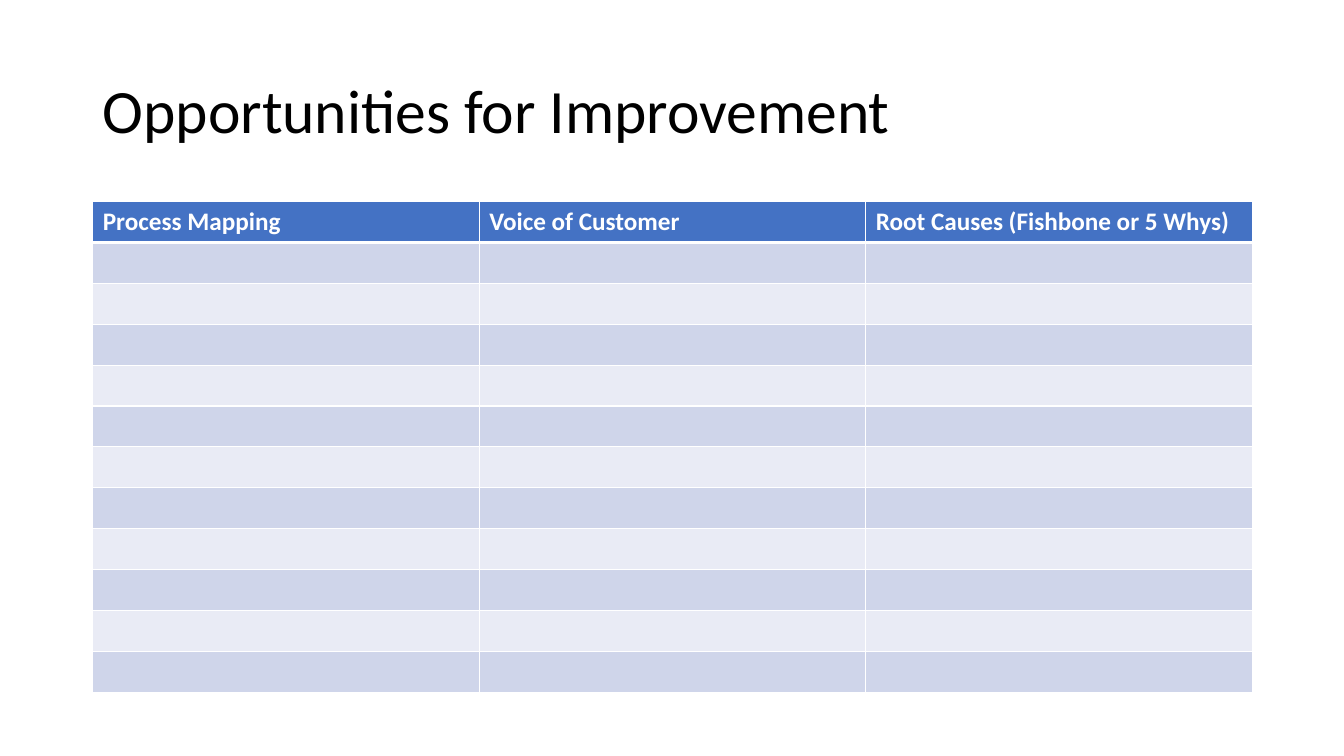
import pptx
import pptx.dml.color
import pptx.enum.text
import pptx.oxml.ns
import pptx.util
import lxml.etree

Inches = pptx.util.Inches
Pt = pptx.util.Pt
RGBColor = pptx.dml.color.RGBColor
qn = pptx.oxml.ns.qn

BLACK = RGBColor(0x00, 0x00, 0x00)
WHITE = RGBColor(0xFF, 0xFF, 0xFF)
HEADER_BLUE = RGBColor(0x44, 0x72, 0xC4)
BAND_DARK = RGBColor(0xCF, 0xD5, 0xEA)
BAND_LIGHT = RGBColor(0xE9, 0xEB, 0xF5)

HEADINGS = ["Process Mapping", "Voice of Customer", "Root Causes (Fishbone or 5 Whys)"]
BLANK_ROWS = 11


def write_text(tf, text, size=18, color=BLACK, bold=False, spacing=None):
    p = tf.paragraphs[0]
    p.line_spacing = spacing
    r = p.add_run()
    r.text = text
    r.font.name = "Calibri"
    r.font.size = Pt(size)
    r.font.bold = bold
    r.font.color.rgb = color


def set_borders(cell, color, **widths):
    tc_pr = cell._tc.get_or_add_tcPr()
    for side in "LRTB":
        ln = lxml.etree.SubElement(tc_pr, qn(f"a:ln{side}"), w=str(Pt(widths.get(side, 1))))
        fill = lxml.etree.SubElement(ln, qn("a:solidFill"))
        lxml.etree.SubElement(fill, qn("a:srgbClr"), val=str(color))


def add_title(s, left, top, width, height):
    tf = s.shapes.add_textbox(left, top, width, height).text_frame
    tf.word_wrap = True
    tf.vertical_anchor = pptx.enum.text.MSO_ANCHOR.MIDDLE
    write_text(tf, "Opportunities for Improvement", size=44, spacing=0.9)


def add_opportunity_table(s, left, top, width, height):
    frame = s.shapes.add_table(BLANK_ROWS + 1, len(HEADINGS), left, top, width, height)
    table = frame.table
    for i, row in enumerate(table.rows):
        for cell in row.cells:
            if i == 0:
                set_borders(cell, WHITE, B=3)
                color = HEADER_BLUE
            else:
                set_borders(cell, WHITE, T=3 if i == 1 else 1)
                color = BAND_DARK if i % 2 else BAND_LIGHT
            cell.fill.solid()
            cell.fill.fore_color.rgb = color
    for cell, heading in zip(table.rows[0].cells, HEADINGS):
        write_text(cell.text_frame, heading, color=WHITE, bold=True)


def main():
    prs = pptx.Presentation()
    prs.slide_width = Inches(13.33)
    prs.slide_height = Inches(7.5)
    s = prs.slides.add_slide(prs.slide_layouts[6])
    left, width = Inches(0.92), Inches(11.5)
    add_title(s, left, Inches(0.4), width, Inches(1.45))
    add_opportunity_table(s, left, Inches(2), width, Inches(4.87))
    prs.save("out.pptx")


if __name__ == "__main__":
    main()
